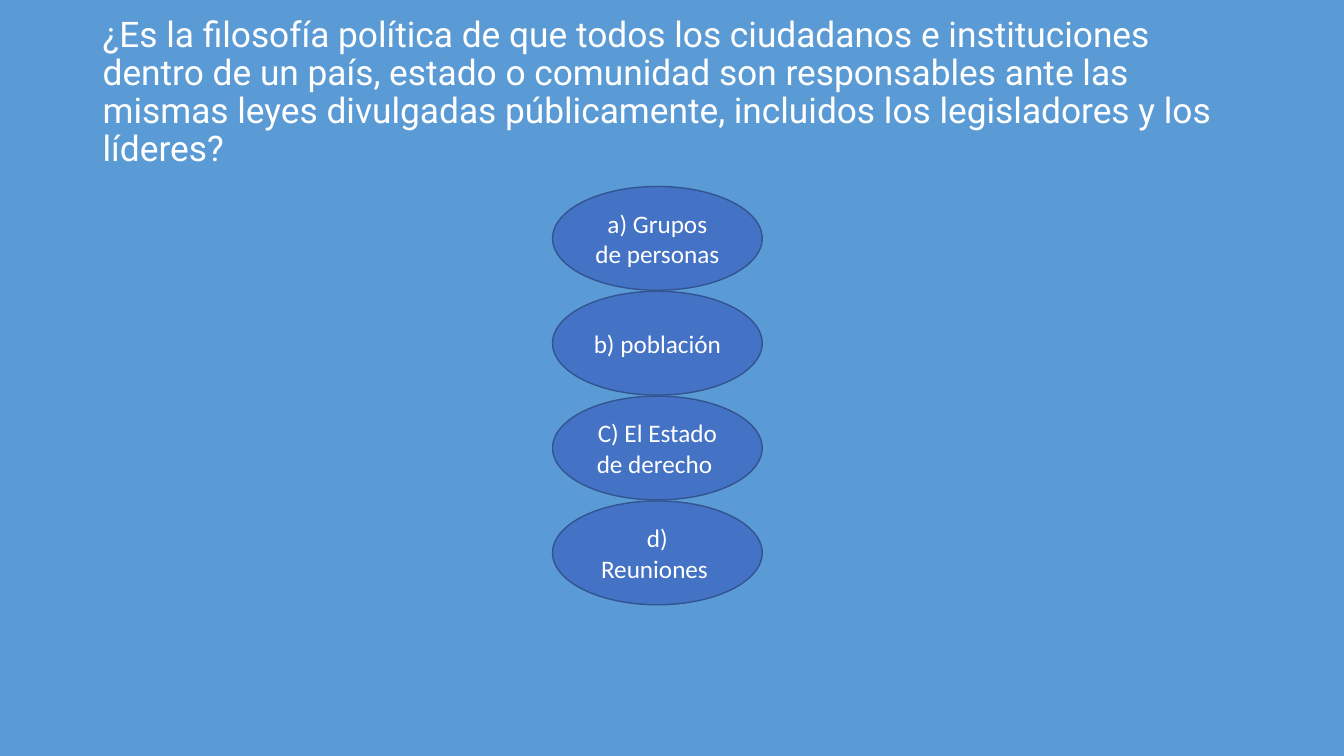
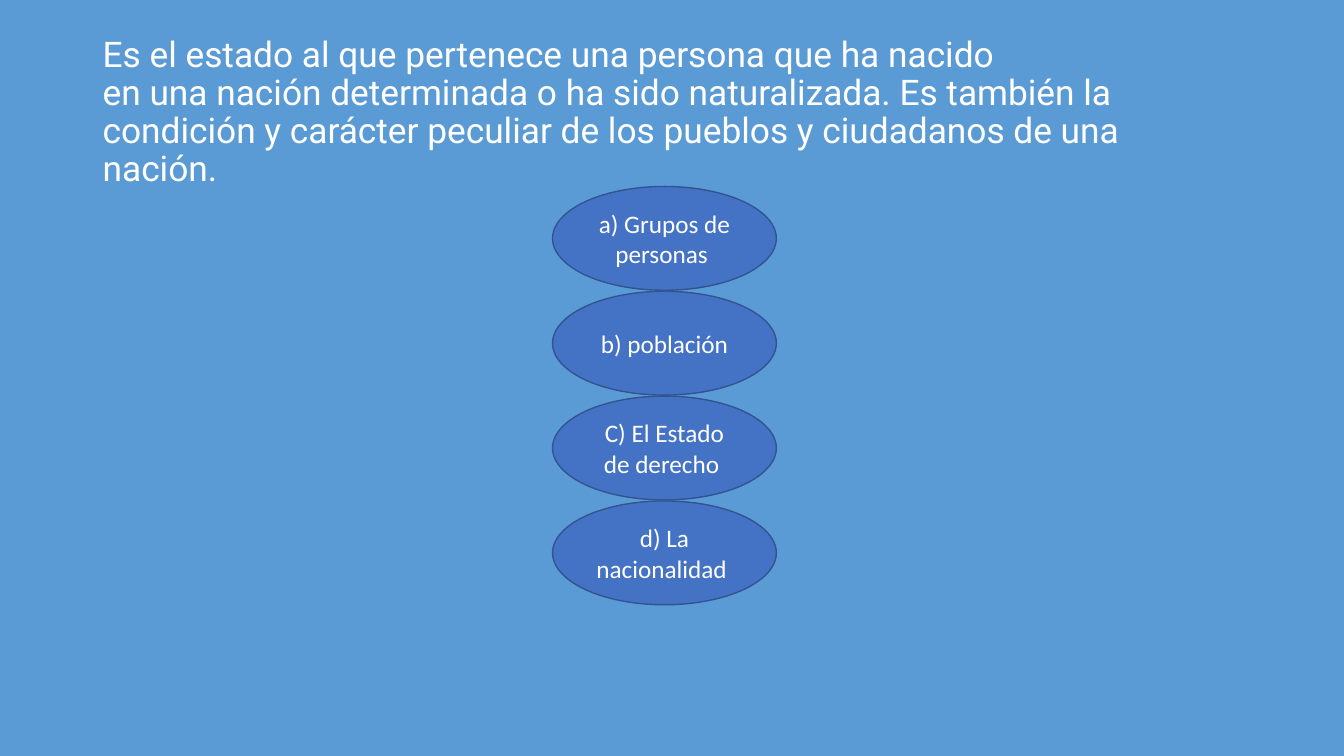
from pptx import Presentation
from pptx.dml.color import RGBColor
from pptx.enum.shapes import MSO_SHAPE as SHAPE
from pptx.enum.text import MSO_ANCHOR as ANCHOR, PP_ALIGN as ALIGN
from pptx.util import Inches, Pt

BACKGROUND, OVAL_FILL, OVAL_LINE, WHITE = "5B9BD5", "4472C4", "325491", "FFFFFF"
OVAL_LEFT, OVAL_TOP, OVAL_HEIGHT, ROW = 5.48, 1.85, 1.03, 1.04
TITLE_LEFT, TITLE_WIDTH, TITLE_HEIGHT = 0.92, 11.5, 1.45


def color(value):
    return RGBColor.from_string(value)


def add_text(p, text, font, size):
    r = p.add_run()
    r.text = text
    r.font.name = font
    r.font.size = Pt(size)
    r.font.color.rgb = color(WHITE)


# Each question: title top, title lines, oval width, answers
questions = [
    (0.2,
     ["¿Es la filosofía política de que todos los ciudadanos e instituciones "
      "dentro de un país, estado o comunidad son responsables ante las "
      "mismas leyes divulgadas públicamente, incluidos los legisladores y los "
      "líderes?"],
     2.08,
     ["a) Grupos de personas ", "b) población",
      "C) El Estado de derecho ", "d) Reuniones "]),
    (0.4,
     ["Es el estado al que pertenece una persona que ha nacido",
      "en una nación determinada o ha sido naturalizada. Es también la",
      "condición y carácter peculiar de los pueblos y ciudadanos de una nación."],
     2.22,
     ["a) Grupos de personas ", "b) población",
      "C) El Estado de derecho ", "d) La nacionalidad "]),
]

prs = Presentation()
prs.slide_width, prs.slide_height = Inches(13.33), Inches(7.5)
blank = prs.slide_layouts[6]

for title_top, lines, oval_width, answers in questions:
    s = prs.slides.add_slide(blank)
    s.background.fill.solid()
    s.background.fill.fore_color.rgb = color(BACKGROUND)

    title = s.shapes.add_textbox(Inches(TITLE_LEFT), Inches(title_top),
                                 Inches(TITLE_WIDTH), Inches(TITLE_HEIGHT))
    tf = title.text_frame
    tf.word_wrap = True
    tf.vertical_anchor = ANCHOR.MIDDLE
    p = tf.paragraphs[0]
    p.line_spacing = 0.9
    for i, line in enumerate(lines):
        if i:
            p.add_line_break()
        add_text(p, line, "Roboto", 25.2)

    for row, answer in enumerate(answers):
        sp = s.shapes.add_shape(SHAPE.OVAL, Inches(OVAL_LEFT),
                                Inches(OVAL_TOP + row * ROW),
                                Inches(oval_width), Inches(OVAL_HEIGHT))
        sp.shadow.inherit = False
        sp.fill.solid()
        sp.fill.fore_color.rgb = color(OVAL_FILL)
        sp.line.color.rgb = color(OVAL_LINE)
        sp.line.width = Pt(1)
        tf = sp.text_frame
        tf.word_wrap = True
        tf.vertical_anchor = ANCHOR.MIDDLE
        p = tf.paragraphs[0]
        p.alignment = ALIGN.CENTER
        add_text(p, answer, "Calibri", 18)

prs.save("out.pptx")
